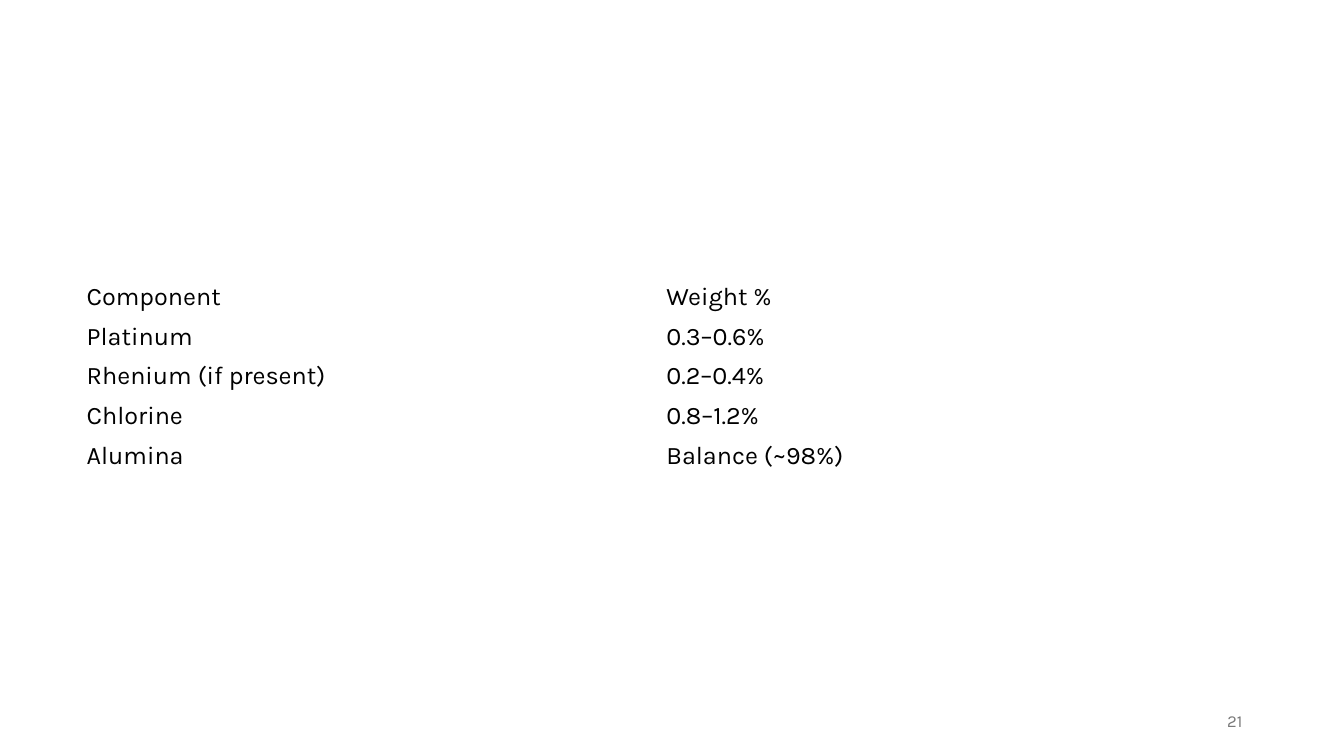
from pptx import Presentation
from pptx.dml.color import RGBColor as Color
from pptx.enum.text import MSO_ANCHOR as Anchor, PP_ALIGN as Align
from pptx.util import Inches, Pt

COLORS = {"text": "000000", "number": "797979", "background": "FFFFFF"}
COMPOSITION = [
    ("Component", "Weight %"),
    ("Platinum", "0.3–0.6%"),
    ("Rhenium (if present)", "0.2–0.4%"),
    ("Chlorine", "0.8–1.2%"),
    ("Alumina", "Balance (~98%)"),
]


class SlideBuilder:
    font_name = "Karla"

    def __init__(self, deck):
        self.page = deck.slides.add_slide(deck.slide_layouts[6])
        fill = self.page.background.fill
        fill.solid()
        fill.fore_color.rgb = Color.from_string(COLORS["background"])

    def add_span(self, para, text, size, color, align=Align.LEFT):
        para.alignment = align
        span = para.add_run()
        span.text = text
        style = {"name": self.font_name, "size": Pt(size), "bold": False}
        for name, value in style.items():
            setattr(span.font, name, value)
        span.font.color.rgb = Color.from_string(COLORS[color])

    def add_table(self, rows, left, top, width, row_height):
        frame = self.page.shapes.add_table(
            len(rows), len(rows[0]), Inches(left), Inches(top),
            Inches(width), Inches(row_height * len(rows)))
        table = frame.table
        for name in ("first_row", "horz_banding"):
            setattr(table, name, False)
        for row, texts in enumerate(rows):
            for column, text in enumerate(texts):
                cell = table.cell(row, column)
                cell.fill.background()
                cell.vertical_anchor = Anchor.MIDDLE
                self.add_span(cell.text_frame.paragraphs[0], text, 18, "text")

    def add_text(self, text, left, top, width, height, size, color, align):
        box = self.page.shapes.add_textbox(
            Inches(left), Inches(top), Inches(width), Inches(height))
        settings = {"word_wrap": True, "vertical_anchor": Anchor.MIDDLE}
        for name, value in settings.items():
            setattr(box.text_frame, name, value)
        self.add_span(box.text_frame.paragraphs[0], text, size, color, align)


def main():
    deck = Presentation()
    deck.slide_width = Inches(13.33)
    deck.slide_height = Inches(7.5)
    builder = SlideBuilder(deck)
    builder.add_table(COMPOSITION, 0.76, 2.75, 11.5, 0.39)
    builder.add_text("21", 9.42, 6.95, 3, 0.4, 12, "number", Align.RIGHT)
    deck.save("out.pptx")


if __name__ == "__main__":
    main()
